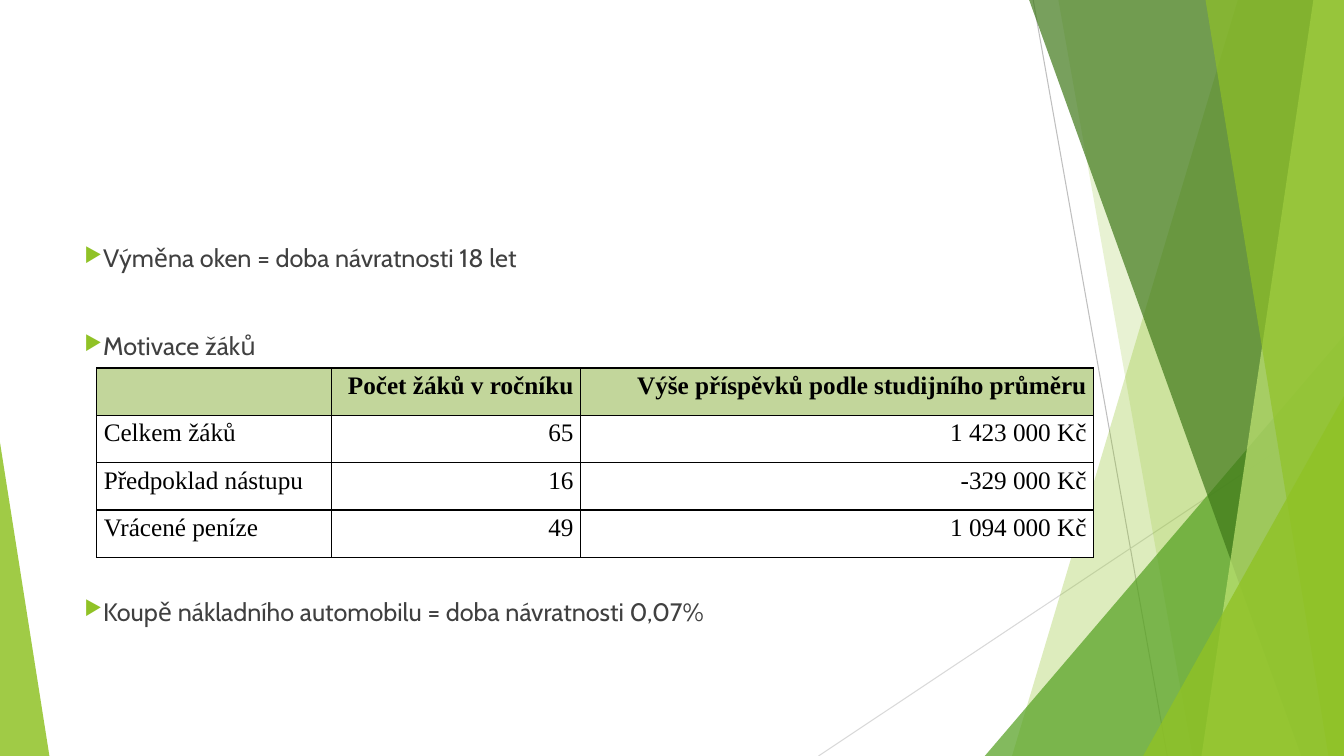
from dataclasses import dataclass
from typing import Any

from pptx import Presentation
from pptx.dml.color import RGBColor
from pptx.enum.shapes import MSO_CONNECTOR as Connector, MSO_SHAPE as Preset
from pptx.enum.text import MSO_ANCHOR as Anchor, PP_ALIGN as Align
from pptx.oxml import parse_xml
from pptx.oxml.ns import nsdecls, qn
from pptx.oxml.xmlchemy import OxmlElement
from pptx.util import Pt


@dataclass(frozen=True)
class Theme:
    lime: str = "90C226"
    pale_lime: str = "C0E474"
    green: str = "54A021"
    dark_green: str = "3F7819"
    header: str = "C2D69B"
    white: str = "FFFFFF"
    black: str = "000000"
    text: str = "404040"
    line: str = "BFBFBF"
    pale_line: str = "D9D9D9"
    body_font: str = "Cabin"
    table_font: str = "Times New Roman"
    size: float = 18
    bullet_percent: int = 80


@dataclass(frozen=True)
class Ray:
    start: tuple[float, float]
    end: tuple[float, float]
    color: str


@dataclass(frozen=True)
class Facet:
    top_x: float
    bottom_x: float
    color: str
    opacity: int


@dataclass(frozen=True)
class Corner:
    left: float
    top: float
    width: float
    apex: float
    color: str
    opacity: int


@dataclass(frozen=True)
class Point:
    text: str
    space_before: float


THEME = Theme()
WIDTH, HEIGHT = 960, 540

RAYS = [
    Ray((738, 0), (833.76, HEIGHT), THEME.line),
    Ray((WIDTH, 290.16), (584.64, HEIGHT), THEME.pale_line),
]
DECORATION = [
    Facet(884.16, 722.88, THEME.lime, 30),
    Facet(756, 851.76, THEME.lime, 20),
    Corner(703.44, 239.76, 256.56, 1, THEME.green, 72),
    Facet(735.12, 929.52, THEME.dark_green, 70),
    Facet(938.16, 858.24, THEME.pale_lime, 70),
    Facet(861.12, 948.96, THEME.lime, 65),
    Corner(816.48, 282.96, 143.52, 1, THEME.lime, 80),
    Corner(0, 316.08, 35.28, 0, THEME.lime, 85),
]
POINTS = [
    Point("Výměna oken = doba návratnosti 18 let", 0),
    Point("Motivace žáků", 41),
    Point("Koupě nákladního automobilu = doba návratnosti 0,07%", 168),
]
COLUMN_WIDTHS = [167.76, 177.84, 366.48]
ROW_HEIGHT = 33.84
ROWS = [
    ["", "Počet žáků v ročníku", "Výše příspěvků podle studijního průměru"],
    ["Celkem žáků", "65", "1 423 000 Kč"],
    ["Předpoklad nástupu", "16", "-329 000 Kč"],
    ["Vrácené peníze", "49", "1 094 000 Kč"],
]


def apply(target: Any, formats: dict[str, Any]) -> None:
    for name, value in formats.items():
        setattr(target, name, value)


def write(para: Any, text: str, color: str, formats: dict[str, Any]) -> None:
    span = para.add_run()
    span.text = text
    apply(span.font, {"size": Pt(THEME.size), **formats})
    span.font.color.rgb = RGBColor.from_string(color)


def paint(shape: Any, color: str, opacity: int) -> None:
    shape.shadow.inherit = False
    shape.line.fill.background()
    shape.fill.solid()
    shape.fill.fore_color.rgb = RGBColor.from_string(color)
    alpha = OxmlElement("a:alpha")
    alpha.set("val", str(opacity * 1000))
    shape.element.spPr.find(qn("a:solidFill"))[0].append(alpha)


def draw_ray(page: Any, ray: Ray) -> None:
    ends = [Pt(value) for value in ray.start + ray.end]
    line = page.shapes.add_connector(Connector.STRAIGHT, *ends)
    line.line.width = Pt(0.75)
    line.line.color.rgb = RGBColor.from_string(ray.color)
    line.element.spPr.append(OxmlElement("a:effectLst"))


def draw_facet(page: Any, facet: Facet) -> None:
    builder = page.shapes.build_freeform(Pt(facet.top_x), 0)
    corners = [(WIDTH, 0), (WIDTH, HEIGHT), (facet.bottom_x, HEIGHT)]
    builder.add_line_segments([(Pt(x), Pt(y)) for x, y in corners])
    paint(builder.convert_to_shape(), facet.color, facet.opacity)


def draw_corner(page: Any, corner: Corner) -> None:
    shape = page.shapes.add_shape(
        Preset.ISOSCELES_TRIANGLE,
        Pt(corner.left), Pt(corner.top), Pt(corner.width), Pt(HEIGHT - corner.top),
    )
    shape.adjustments[0] = corner.apex
    paint(shape, corner.color, corner.opacity)


def add_bullet(para: Any) -> None:
    properties = para._p.get_or_add_pPr()
    apply(properties, {"marL": Pt(27), "indent": Pt(-27)})
    for markup in (
        f'<a:buClr {nsdecls("a")}><a:srgbClr val="{THEME.lime}"/></a:buClr>',
        f'<a:buSzPct {nsdecls("a")} val="{THEME.bullet_percent * 1000}"/>',
        f'<a:buChar {nsdecls("a")} char="▶"/>',
    ):
        properties.append(parse_xml(markup))


def draw_points(page: Any, points: list[Point]) -> None:
    box = page.shapes.add_textbox(Pt(53.28), Pt(169.92), Pt(676.8), Pt(305.28))
    frame = box.text_frame
    frame.word_wrap = True
    for index, point in enumerate(points):
        para = frame.add_paragraph() if index else frame.paragraphs[0]
        add_bullet(para)
        para.space_before = Pt(point.space_before)
        write(para, point.text, THEME.text, {"name": THEME.body_font})


def add_borders(cell: Any) -> None:
    properties = cell._tc.get_or_add_tcPr()
    for side in ("lnL", "lnR", "lnT", "lnB"):
        properties.append(parse_xml(
            f'<a:{side} {nsdecls("a")} w="{Pt(1)}"><a:solidFill>'
            f'<a:srgbClr val="{THEME.black}"/></a:solidFill></a:{side}>'
        ))


def draw_table(page: Any, rows: list[list[str]]) -> None:
    table = page.shapes.add_table(
        len(rows), len(COLUMN_WIDTHS), Pt(69.12), Pt(262.8),
        Pt(sum(COLUMN_WIDTHS)), Pt(ROW_HEIGHT * len(rows)),
    ).table
    apply(table, {"first_row": False, "horz_banding": False})
    for column, width in zip(table.columns, COLUMN_WIDTHS):
        column.width = Pt(width)
    margins = {"margin_left": Pt(5.04), "margin_right": Pt(5.04),
               "margin_top": 0, "margin_bottom": 0}
    for row_index, row in enumerate(rows):
        table.rows[row_index].height = Pt(ROW_HEIGHT)
        is_header = row_index == 0
        for column_index, text in enumerate(row):
            cell = table.cell(row_index, column_index)
            apply(cell, {**margins, "vertical_anchor": Anchor.TOP})
            add_borders(cell)
            cell.fill.solid()
            fill = THEME.header if is_header else THEME.white
            cell.fill.fore_color.rgb = RGBColor.from_string(fill)
            if text:
                para = cell.text_frame.paragraphs[0]
                align = Align.RIGHT if column_index else Align.LEFT
                apply(para, {"alignment": align, "line_spacing": 1.15})
                write(para, text, THEME.black, {"name": THEME.table_font, "bold": is_header})


def main() -> None:
    deck = Presentation()
    apply(deck, {"slide_width": Pt(WIDTH), "slide_height": Pt(HEIGHT)})
    page = deck.slides.add_slide(deck.slide_layouts[6])
    for ray in RAYS:
        draw_ray(page, ray)
    for item in DECORATION:
        if isinstance(item, Facet):
            draw_facet(page, item)
        else:
            draw_corner(page, item)
    draw_points(page, POINTS)
    draw_table(page, ROWS)
    deck.save("out.pptx")


if __name__ == "__main__":
    main()
